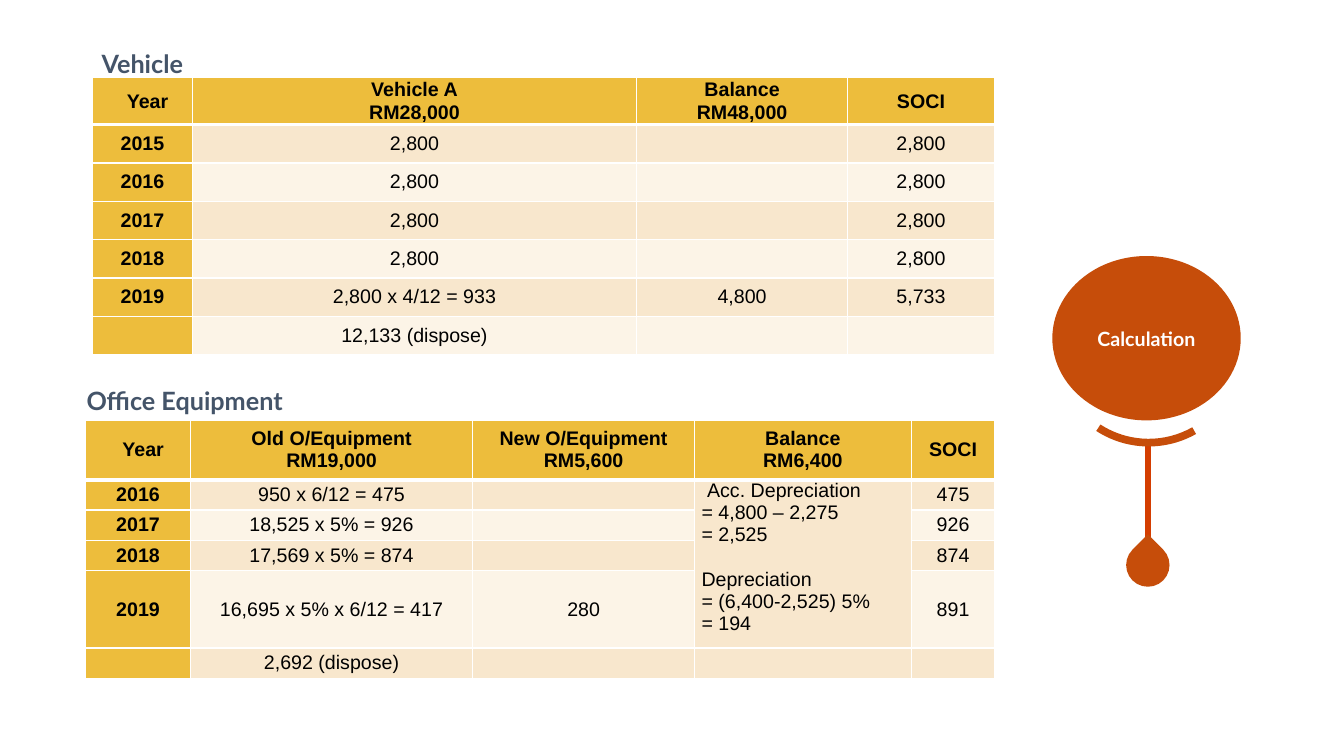
from lxml import etree
from pptx import Presentation
from pptx import util as u
from pptx.dml import color
from pptx.enum import shapes, text
from pptx.oxml import ns

GOLD, SAND, CREAM = "EDBD3C", "F8E7CD", "FCF4E7"
RUST, FLAME, SLATE = "C64D0A", "D43E01", "445469"
BLACK, WHITE = "000000", "FFFFFF"

VEHICLE_ROWS = [
    ["Year", "Vehicle A\nRM28,000", "Balance\nRM48,000", "SOCI"],
    *[[str(year), "2,800", "", "2,800"] for year in range(2015, 2019)],
    ["2019", "2,800 x 4/12 = 933", "4,800", "5,733"],
    ["", "12,133 (dispose)", "", ""],
]
BALANCE_NOTE = ("Acc. Depreciation\n= 4,800 – 2,275\n= 2,525\n"
                "Depreciation\n= (6,400-2,525) 5%\n= 194")
EQUIPMENT_ROWS = [
    ["Year", "Old O/Equipment\nRM19,000", "New O/Equipment\nRM5,600",
     "Balance\nRM6,400", "SOCI"],
    ["2016", "950 x 6/12 = 475", "", BALANCE_NOTE, "475"],
    ["2017", "18,525 x 5% = 926", "", "", "926"],
    ["2018", "17,569 x 5% = 874", "", "", "874"],
    ["2019", "16,695 x 5% x 6/12 = 417", "280", "", "891"],
    ["", "2,692 (dispose)", "", "", ""],
]


def rgb(value):
    return color.RGBColor.from_string(value)


def style_font(para, name, size, value, bold):
    para.font.name = name
    para.font.size = u.Pt(size)
    para.font.bold = bold
    para.font.color.rgb = rgb(value)


def indent_first_line(para, points):
    para._p.get_or_add_pPr().set("indent", str(u.Pt(points)))


def add_borders(cell, row):
    properties = cell._tc.get_or_add_tcPr()
    widths = {"lnL": 1, "lnR": 1, "lnT": 3 if row == 1 else 1,
              "lnB": 3 if row == 0 else 1}
    for side, width in widths.items():
        border = etree.SubElement(properties, ns.qn(f"a:{side}"), w=str(u.Pt(width)))
        fill = etree.SubElement(border, ns.qn("a:solidFill"))
        etree.SubElement(fill, ns.qn("a:srgbClr"), val=WHITE)


def fill_cell(cell, content, row, column):
    heading = row == 0 or column == 0
    add_borders(cell, row)
    cell.fill.solid()
    cell.fill.fore_color.rgb = rgb(GOLD if heading else SAND if row % 2 else CREAM)
    cell.margin_left = cell.margin_right = u.Pt(5)
    cell.margin_top = cell.margin_bottom = 0
    cell.vertical_anchor = text.MSO_ANCHOR.MIDDLE
    cell.text = content
    for para in cell.text_frame.paragraphs:
        para.alignment = text.PP_ALIGN.CENTER
        style_font(para, "Arial", 14, BLACK, heading)


def add_schedule(page, left, top, widths, heights, rows):
    frame = page.shapes.add_table(len(rows), len(widths), u.Pt(left), u.Pt(top),
                                  u.Pt(sum(widths)), u.Pt(sum(heights)))
    table = frame.table
    table.first_row = table.horz_banding = False
    for column, width in zip(table.columns, widths):
        column.width = u.Pt(width)
    for line, height in zip(table.rows, heights):
        line.height = u.Pt(height)
    for row, contents in enumerate(rows):
        for column, content in enumerate(contents):
            fill_cell(table.cell(row, column), content, row, column)
    indent_first_line(table.cell(0, 0).text_frame.paragraphs[0], 7.2)
    return table


def merge_balance(table):
    note = table.cell(1, 3)
    note.merge(table.cell(4, 3))
    note.vertical_anchor = text.MSO_ANCHOR.TOP
    paras = note.text_frame.paragraphs
    for para in paras:
        para.alignment = text.PP_ALIGN.LEFT
    indent_first_line(paras[0], 4)
    paras[3].space_before = u.Pt(16)


def add_title(page, left, top, width, content):
    box = page.shapes.add_textbox(u.Pt(left), u.Pt(top), u.Pt(width), u.Pt(29))
    box.text_frame.word_wrap = True
    box.text_frame.text = content
    style_font(box.text_frame.paragraphs[0], "Lato", 18, SLATE, True)


def add_figure(page, kind, left, top, width, height, rotation=0, adjustments=()):
    figure = page.shapes.add_shape(kind, u.Pt(left), u.Pt(top), u.Pt(width), u.Pt(height))
    figure.shadow.inherit = False
    figure.fill.solid()
    figure.fill.fore_color.rgb = rgb(RUST)
    figure.line.fill.background()
    figure.rotation = rotation
    for index, value in enumerate(adjustments):
        figure.adjustments[index] = value
    return figure


def add_stem(page, x, start, end):
    stem = page.shapes.add_connector(shapes.MSO_CONNECTOR.STRAIGHT,
                                     u.Pt(x), u.Pt(start), u.Pt(x), u.Pt(end))
    stem.line.color.rgb = rgb(FLAME)
    stem.line.width = u.Pt(4.25)
    etree.SubElement(stem._element.spPr, ns.qn("a:effectLst"))


def add_calculation_marker(page):
    kinds = shapes.MSO_SHAPE
    disc = add_figure(page, kinds.OVAL, 751.7, 182.9, 134.6, 117.4)
    disc.text_frame.text = "Calculation"
    disc.text_frame.vertical_anchor = text.MSO_ANCHOR.MIDDLE
    para = disc.text_frame.paragraphs[0]
    para.alignment = text.PP_ALIGN.CENTER
    style_font(para, "Lato", 14, WHITE, True)
    add_stem(page, 820, 399, 317.5)
    add_figure(page, kinds.BLOCK_ARC, 751.7, 181.4, 137.5, 137.5, 128,
               (175.5, 212.98, 0.04))
    add_figure(page, kinds.TEAR, 804.4, 388.1, 31, 31, 315, (1,))


def main():
    deck = Presentation()
    deck.slide_width, deck.slide_height = u.Pt(960), u.Pt(540)
    page = deck.slides.add_slide(deck.slide_layouts[6])
    add_schedule(page, 66.2, 55.6, [71.2, 317.5, 150.5, 105.1],
                 [33.4] + [27.4] * 6, VEHICLE_ROWS)
    equipment = add_schedule(page, 61.2, 300.2, [74.9, 201.6, 158.4, 154.8, 59.8],
                             [42.5, 21.6, 21.6, 21.6, 55.4, 21.6], EQUIPMENT_ROWS)
    merge_balance(equipment)
    add_title(page, 65.5, 31, 77, "Vehicle")
    add_title(page, 54.7, 271.4, 165, "Office Equipment")
    add_calculation_marker(page)
    deck.save("out.pptx")


if __name__ == "__main__":
    main()
